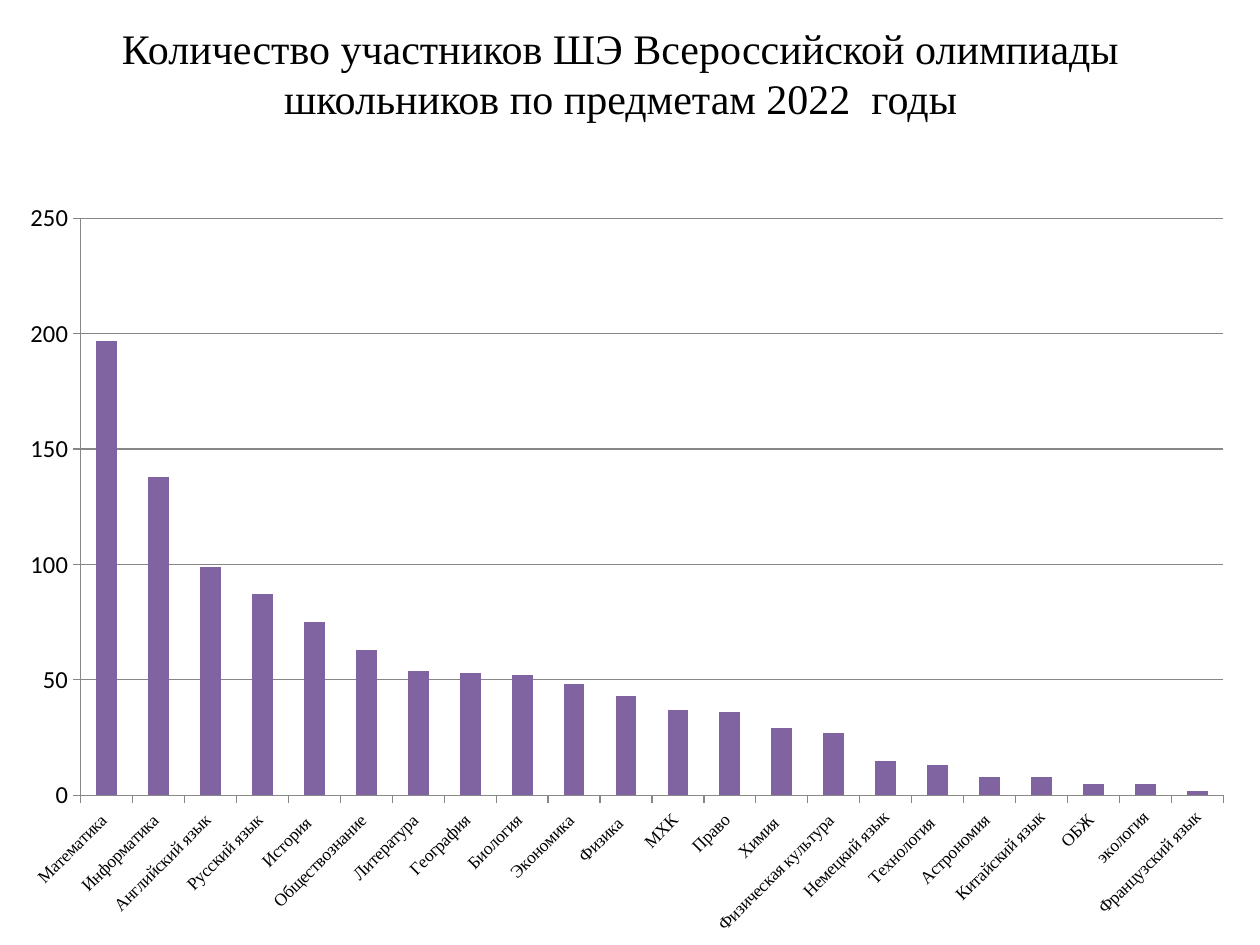
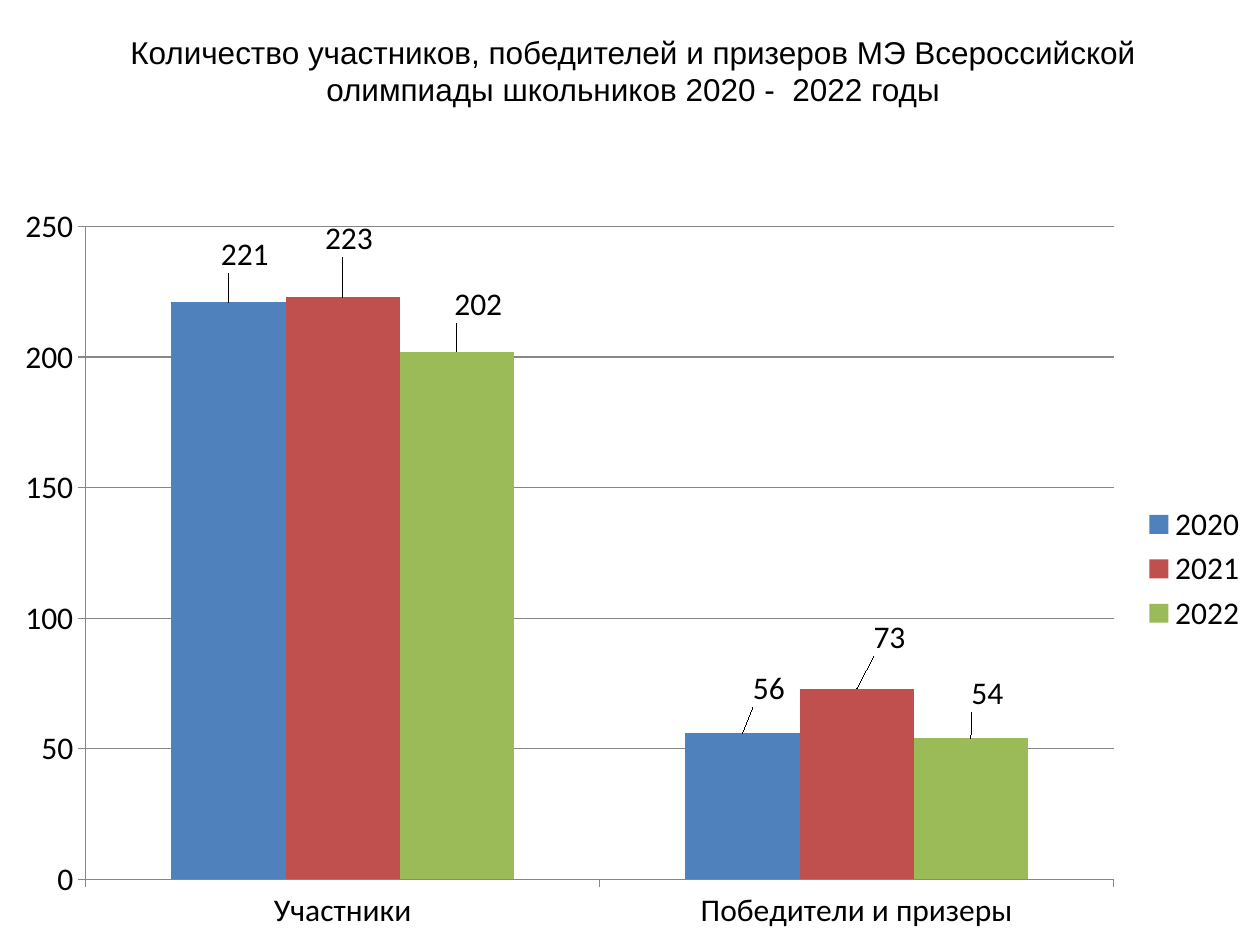
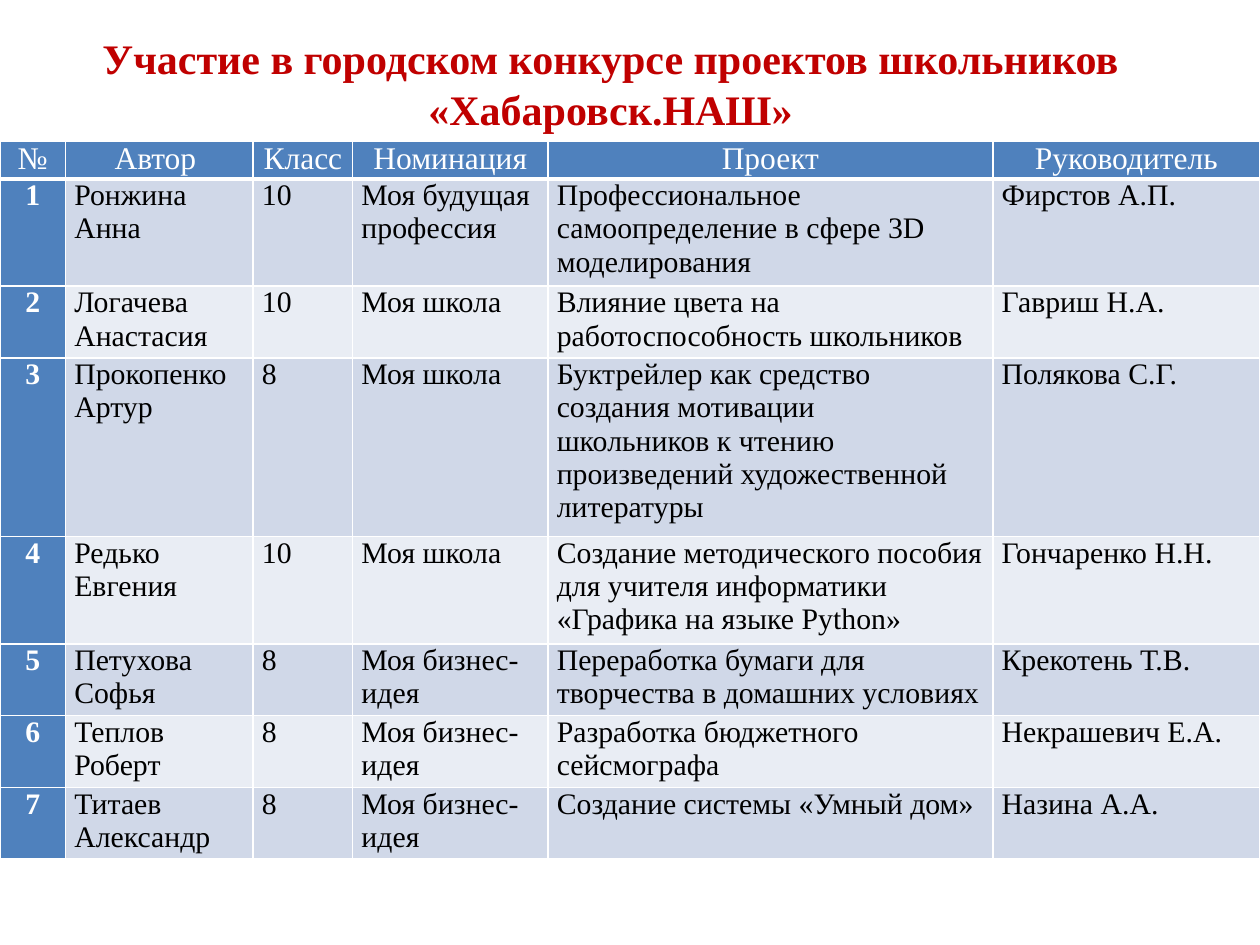
"""Build three slides on school olympiads and a city project contest."""
import pptx
import pptx.chart.data
import pptx.dml.color
import pptx.enum.chart
import pptx.enum.text
import pptx.oxml
import pptx.oxml.ns
import pptx.util

Inches = pptx.util.Inches
Pt = pptx.util.Pt
ALIGN = pptx.enum.text.PP_ALIGN
SERIF = "Times New Roman"
BLACK, WHITE, RED, GRID = "000000", "FFFFFF", "C00000", "878787"
HEADER, BANDS = "4F81BD", ("D0D8E8", "E9EDF4")
NO_BREAK_SPACE = chr(160)


def rgb(value):
    return pptx.dml.color.RGBColor.from_string(value)


def set_font(font, name, size, color, bold=False):
    font.name, font.size, font.bold = name, Pt(size), bold
    font.color.rgb = rgb(color)


presentation = pptx.Presentation()
presentation.slide_width, presentation.slide_height = Inches(10), Inches(7.5)

titles = [
    ("Количество участников ШЭ Всероссийской олимпиады школьников по предметам 2022  годы",
     (0.12, 0.13, 9.61, 0.91), SERIF, 24, BLACK, False),
    ("Количество участников, победителей и призеров МЭ Всероссийской олимпиады "
     "школьников 2020 -  2022 годы",
     (0.28, 0.21, 9.49, 0.71), "Arial", 18, BLACK, False),
    ("Участие в городском конкурсе проектов школьников «Хабаровск.НАШ»",
     (0.12, 0.21, 9.45, 0.91), SERIF, 24, RED, True),
]
slides = []
for wording, place, *style in titles:
    slide = presentation.slides.add_slide(presentation.slide_layouts[6])
    title = slide.shapes.add_textbox(*map(Inches, place)).text_frame
    title.word_wrap = True
    title.text = wording
    title.paragraphs[0].alignment = ALIGN.CENTER
    set_font(title.paragraphs[0].font, *style)
    slides.append(slide)

participants = {
    "Математика ": 197, "Информатика ": 138, "Английский язык ": 99, "Русский язык ": 87,
    "История  ": 75, "Обществознание ": 63, "Литература ": 54, "География ": 53,
    "Биология ": 52, "Экономика ": 48, "Физика  ": 43, "МХК ": 37, "Право ": 36,
    "Химия  ": 29, "Физическая культура ": 27, "Немецкий язык": 15, "Технология  ": 13,
    "Астрономия ": 8, "Китайский язык": 8, "ОБЖ ": 5, "экология": 5, "Французский язык": 2,
}
results = {"2020": (221, 56), "2021": (223, 73), "2022": (202, 54)}
charts_content = [
    (list(participants), {"Series 1": list(participants.values())}, ["8064A2"],
     (0.12, 1.53, 10.39, 5.97), (0.05, 0.034, 0.873, 0.767)),
    (["Участники", "Победители и призеры"], results, ["4F81BD", "C0504D", "9BBB59"],
     (0, 1.53, 10, 5.97), (0.068, 0.045, 0.816, 0.868)),
]
charts = []
for slide, (categories, values, colors, place, plot_place) in zip(slides, charts_content):
    data = pptx.chart.data.CategoryChartData()
    data.categories = categories
    for name, numbers in values.items():
        data.add_series(name, numbers)
    chart = slide.shapes.add_chart(
        pptx.enum.chart.XL_CHART_TYPE.COLUMN_CLUSTERED, *map(Inches, place), data).chart
    set_font(chart.font, "Calibri", 18, BLACK)
    chart.has_title = False
    chart.has_legend = False
    chart.plots[0].gap_width = 150
    chart.plots[0].vary_by_categories = False
    for series, color in zip(chart.plots[0].series, colors):
        series.format.fill.solid()
        series.format.fill.fore_color.rgb = rgb(color)
    chart.value_axis.has_major_gridlines = True
    chart.value_axis.maximum_scale, chart.value_axis.major_unit = 250, 50
    chart.value_axis.minimum_scale = 0
    for line in (chart.value_axis.format.line, chart.category_axis.format.line,
                 chart.value_axis.major_gridlines.format.line):
        line.color.rgb = rgb(GRID)
        line.width = Pt(0.75)
    plot_area = chart.plots[0]._element.getparent()
    for layout in plot_area.xpath("c:layout"):
        plot_area.remove(layout)
    x, y, width, height = plot_place
    plot_area.insert(0, pptx.oxml.parse_xml(
        f'<c:layout {pptx.oxml.ns.nsdecls("c")}><c:manualLayout>'
        '<c:layoutTarget val="inner"/><c:xMode val="edge"/><c:yMode val="edge"/>'
        f'<c:x val="{x}"/><c:y val="{y}"/><c:w val="{width}"/><c:h val="{height}"/>'
        '</c:manualLayout></c:layout>'))
    charts.append(chart)

subjects_chart, results_chart = charts
set_font(subjects_chart.category_axis.tick_labels.font, SERIF, 10, BLACK)
set_font(subjects_chart.value_axis.tick_labels.font, "Calibri", 14, BLACK)
for body in subjects_chart.category_axis._element.xpath("c:txPr/a:bodyPr"):
    body.set("rot", "-2700000")

results_chart.has_legend = True
results_chart.legend.position = pptx.enum.chart.XL_LEGEND_POSITION.RIGHT
results_chart.legend.include_in_layout = False
label_shifts = [
    [(0.013, -0.032), (0.021, -0.028)],
    [(0.005, -0.046), (0.026, -0.036)],
    [(0.017, -0.031), (0.013, -0.028)],
]
outside_end = pptx.enum.chart.XL_LABEL_POSITION.OUTSIDE_END
for series, shifts in zip(results_chart.plots[0].series, label_shifts):
    series.data_labels.show_value = True
    series.data_labels.position = outside_end
    for index in range(len(shifts)):
        series.points[index].data_label.position = outside_end
    for label, (x, y) in zip(series._element.xpath("c:dLbls/c:dLbl"), shifts):
        label.insert(1, pptx.oxml.parse_xml(
            f'<c:layout {pptx.oxml.ns.nsdecls("c")}><c:manualLayout>'
            f'<c:x val="{x}"/><c:y val="{y}"/></c:manualLayout></c:layout>'))
    series._element.xpath("c:dLbls")[0].append(pptx.oxml.parse_xml(
        f'<c:extLst {pptx.oxml.ns.nsdecls("c")}>'
        '<c:ext uri="{CE6537A1-D6FC-4f65-9D91-7224C49458BB}" '
        'xmlns:c15="http://schemas.microsoft.com/office/drawing/2012/chart">'
        '<c15:showLeaderLines val="0"/></c:ext></c:extLst>'))

projects = [
    ("№", "Автор ", "Класс", "Номинация", "Проект", "Руководитель"),
    ("1", "Ронжина Анна", "10", "Моя будущая профессия",
     "Профессиональное самоопределение в сфере 3D моделирования", "Фирстов А.П."),
    ("2", "Логачева Анастасия", "10", "Моя школа",
     "Влияние цвета на работоспособность школьников", "Гавриш Н.А."),
    ("3", "Прокопенко Артур", "8", "Моя школа",
     f"Буктрейлер как средство создания мотивации школьников{NO_BREAK_SPACE}к чтению "
     "произведений художественной литературы", "Полякова С.Г."),
    ("4", "Редько Евгения", "10", "Моя школа",
     "Создание методического пособия для учителя информатики «Графика на языке Python»",
     "Гончаренко Н.Н."),
    ("5", "Петухова Софья", "8", "Моя бизнес-идея",
     "Переработка бумаги для творчества в домашних условиях", "Крекотень Т.В."),
    ("6", "Теплов Роберт ", "8", "Моя бизнес-идея",
     "Разработка бюджетного сейсмографа", "Некрашевич Е.А."),
    ("7", "Титаев Александр", "8", "Моя бизнес-идея",
     "Создание системы «Умный дом»", "Назина А.А."),
]
column_widths = (0.52, 1.49, 0.79, 1.55, 3.53, 2.12)
row_heights = (0.3, 0.85, 0.57, 1.41, 0.85, 0.57, 0.57, 0.57)
contest = slides[2].shapes.add_table(
    len(projects), len(column_widths), Inches(0), Inches(1.12), Inches(10), Inches(5.69)).table
for column, width in zip(contest.columns, column_widths):
    column.width = Inches(width)
for row_index, (project, height) in enumerate(zip(projects, row_heights)):
    contest.rows[row_index].height = Inches(height)
    for column_index, wording in enumerate(project):
        cell = contest.cell(row_index, column_index)
        cell.text = wording
        cell.margin_left = cell.margin_right = Inches(0.07)
        cell.margin_top = cell.margin_bottom = 0
        in_header = row_index == 0
        is_number = column_index == 0
        accented = in_header or is_number
        paragraph = cell.text_frame.paragraphs[0]
        if accented:
            paragraph.alignment = ALIGN.CENTER
        elif column_index == 1:
            paragraph.alignment = ALIGN.JUSTIFY
        set_font(paragraph.font, SERIF, 18 if in_header else 17,
                 WHITE if accented else BLACK, is_number and not in_header)
        for side in "LRTB":
            thick = (in_header and side == "B") or (row_index == 1 and side == "T")
            cell._tc.get_or_add_tcPr().append(pptx.oxml.parse_xml(
                f'<a:ln{side} {pptx.oxml.ns.nsdecls("a")} w="{Pt(3 if thick else 1)}">'
                f'<a:solidFill><a:srgbClr val="{WHITE}"/></a:solidFill></a:ln{side}>'))
        cell.fill.solid()
        cell.fill.fore_color.rgb = rgb(HEADER if accented else BANDS[(row_index - 1) % 2])

presentation.save("out.pptx")
